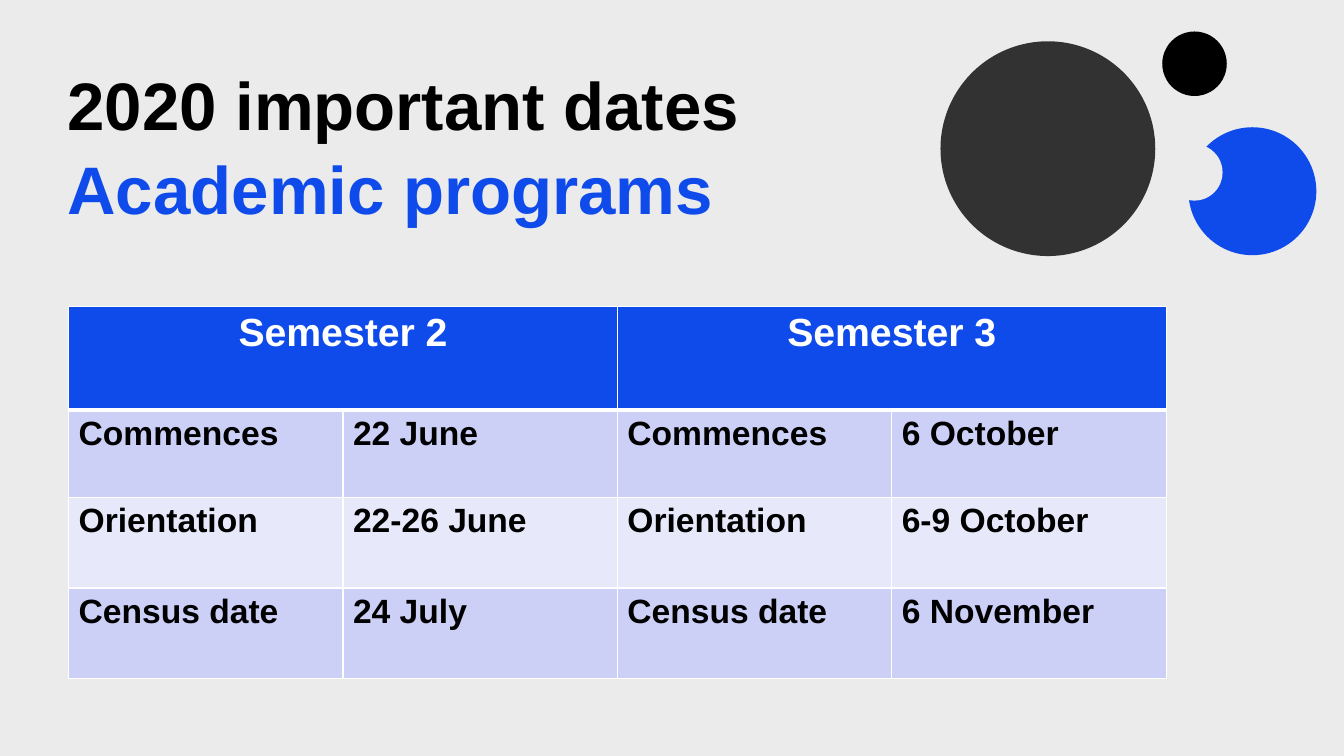
from dataclasses import dataclass

from lxml import etree
from pptx import Presentation
from pptx.dml.color import RGBColor
from pptx.enum import shapes, text
from pptx.oxml import ns
from pptx.util import Pt


@dataclass(frozen=True)
class Theme:
    font: str = "Arial"
    background: str = "EBEBEB"
    black: str = "000000"
    dark: str = "323232"
    blue: str = "0F4BEB"
    white: str = "FFFFFF"
    bands: tuple = ("CCD0F7", "E7E9FB")
    title_size: int = 48
    header_size: int = 28
    body_size: int = 24
    border: int = 1
    header_border: int = 3


def add_text(p, content, *, font, size, color, bold=True, align=text.PP_ALIGN.LEFT):
    """Append a formatted run to a paragraph."""
    p.alignment = align
    r = p.add_run()
    r.text = content
    r.font.name = font
    r.font.size = Pt(size)
    r.font.bold = bold
    r.font.color.rgb = RGBColor.from_string(color)


def add_border(cell, side, color, width):
    """Add a solid line on one side (L, R, T or B) of a table cell."""
    ln = etree.SubElement(cell._tc.get_or_add_tcPr(), ns.qn(f"a:ln{side}"), w=str(Pt(width)))
    fill = etree.SubElement(ln, ns.qn("a:solidFill"))
    etree.SubElement(fill, ns.qn("a:srgbClr"), val=color)


class SlideBuilder:
    def __init__(self, prs, theme):
        self.theme = theme
        self.s = prs.slides.add_slide(prs.slide_layouts[5])
        self.fill(self.s.background, theme.background)

    def fill(self, target, color):
        target.fill.solid()
        target.fill.fore_color.rgb = RGBColor.from_string(color)

    def title(self, lines, left, top, width, height):
        sp = self.s.shapes.title
        sp.left, sp.top, sp.width, sp.height = Pt(left), Pt(top), Pt(width), Pt(height)
        tf = sp.text_frame
        tf.word_wrap = True
        tf.auto_size = text.MSO_AUTO_SIZE.NONE
        tf.vertical_anchor = text.MSO_ANCHOR.BOTTOM
        tf.margin_left = tf.margin_right = tf.margin_top = tf.margin_bottom = 0
        p = tf.paragraphs[0]
        p.line_spacing = 1.04
        for i, (content, color) in enumerate(lines):
            if i:
                p.add_line_break()
            add_text(p, content, font=self.theme.font, size=self.theme.title_size, color=color)

    def circle(self, left, top, size, color):
        sp = self.s.shapes.add_shape(
            shapes.MSO_SHAPE.OVAL, Pt(left), Pt(top), Pt(size), Pt(size))
        sp.shadow.inherit = False
        sp.line.fill.background()
        self.fill(sp, color)

    def cell(self, cell, content, *, fill, top, bottom, **fmt):
        for side, width in zip("LRTB", (self.theme.border, self.theme.border, top, bottom)):
            add_border(cell, side, self.theme.white, width)
        self.fill(cell, fill)
        if content:
            add_text(cell.text_frame.paragraphs[0], content, font=self.theme.font, **fmt)

    def table(self, headers, rows, left, top, col_width, row_heights):
        t = self.theme
        cols = len(rows[0])
        span = cols // len(headers)
        table = self.s.shapes.add_table(
            len(rows) + 1, cols, Pt(left), Pt(top),
            Pt(col_width * cols), Pt(sum(row_heights))).table
        table.horz_banding = False
        for col in table.columns:
            col.width = Pt(col_width)
        for row, height in zip(table.rows, row_heights):
            row.height = Pt(height)

        # Header row, each heading spanning a pair of columns
        for c in range(cols):
            self.cell(table.cell(0, c), "" if c % span else headers[c // span],
                      fill=t.blue, top=t.border, bottom=t.header_border,
                      size=t.header_size, color=t.white, align=text.PP_ALIGN.CENTER)
        for c in range(0, cols, span):
            table.cell(0, c).merge(table.cell(0, c + span - 1))

        # Banded body rows
        for i, row in enumerate(rows):
            for c, content in enumerate(row):
                self.cell(table.cell(i + 1, c), content, fill=t.bands[i % 2],
                          top=t.border if i else t.header_border, bottom=t.border,
                          size=t.body_size, color=t.black)


def main():
    prs = Presentation()
    prs.slide_width, prs.slide_height = Pt(960), Pt(540)
    theme = Theme()
    slide = SlideBuilder(prs, theme)

    # Title
    slide.title([("2020 important dates", theme.black), ("Academic programs", theme.blue)],
                48.2, 46.1, 623.5, 116.6)

    # Circles, the background-coloured one biting into the blue one
    for left, top, size, color in (
        (671.8, 29.5, 153.4, theme.dark),
        (848.9, 90.9, 91.4, theme.blue),
        (833, 103, 40.3, theme.background),
        (830.2, 22.5, 46.1, theme.black),
    ):
        slide.circle(left, top, size, color)

    # Dates table
    slide.table(
        ["Semester 2", "Semester 3"],
        [["Commences", "22 June", "Commences", "6 October"],
         ["Orientation", "22-26 June", "Orientation", "6-9 October"],
         ["Census date", "24 July", "Census date", "6 November"]],
        left=49, top=218.9, col_width=196, row_heights=(73.8, 62.6, 64.7, 64.7))

    prs.save("out.pptx")


if __name__ == "__main__":
    main()
